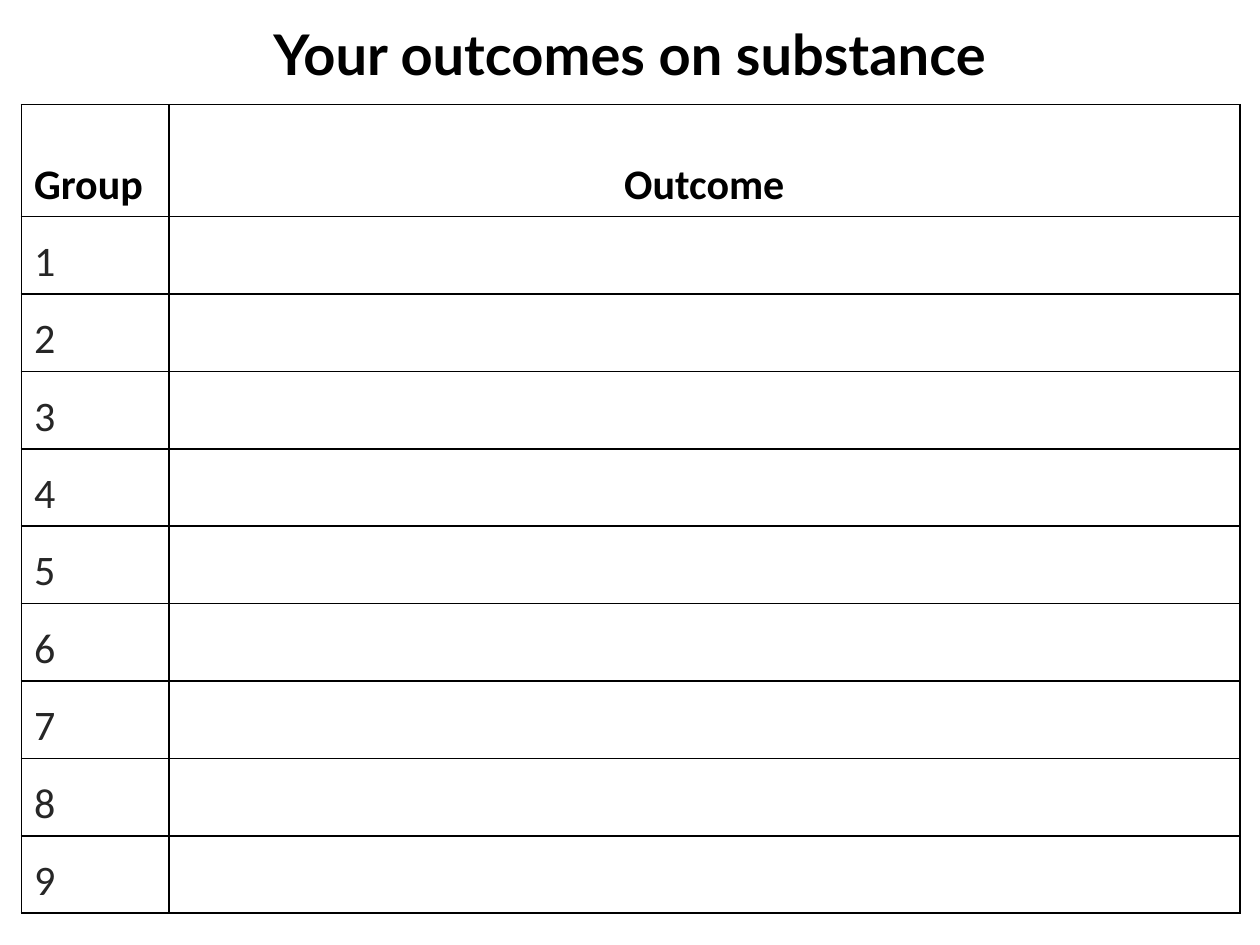
from lxml import etree
from pptx import Presentation
from pptx.dml.color import RGBColor
from pptx.enum.text import MSO_ANCHOR, PP_ALIGN
from pptx.oxml.ns import qn
from pptx.util import Inches, Pt

LEFT, CENTER = PP_ALIGN.LEFT, PP_ALIGN.CENTER
BOTTOM = MSO_ANCHOR.BOTTOM
BLACK = RGBColor(0x00, 0x00, 0x00)
DARK_GRAY = RGBColor(0x26, 0x26, 0x26)

GROUPS = 9
TABLE_HEIGHT = 6.42
HEADER_HEIGHT = 0.89
COLUMN_WIDTHS = (1.17, 8.5)


def write_text(tf, text, size=24, font="Calibri", color=BLACK, bold=False, align=LEFT):
    p = tf.paragraphs[0]
    p.alignment = align
    r = p.add_run()
    r.text = text
    r.font.size = Pt(size)
    r.font.name = font
    r.font.bold = bold
    r.font.color.rgb = color


def add_title(s, text):
    sp = s.shapes.add_textbox(Inches(0), Inches(0.11), Inches(10), Inches(0.64))
    sp.text_frame.word_wrap = True
    write_text(sp.text_frame, text, size=32, font="Lato", bold=True, align=CENTER)


def set_borders(cell, color=BLACK, width=1):
    props = cell._tc.get_or_add_tcPr()
    for i, side in enumerate(("a:lnL", "a:lnR", "a:lnT", "a:lnB")):
        line = etree.Element(qn(side), w=str(Pt(width)))
        fill = etree.SubElement(line, qn("a:solidFill"))
        etree.SubElement(fill, qn("a:srgbClr"), val=str(color))
        props.insert(i, line)


def add_outcome_table(s):
    frame = s.shapes.add_table(GROUPS + 1, len(COLUMN_WIDTHS), Inches(0.17), Inches(0.83),
                               Inches(sum(COLUMN_WIDTHS)), Inches(TABLE_HEIGHT))
    table = frame.table
    table.horz_banding = False
    table.first_row = False
    for column, width in zip(table.columns, COLUMN_WIDTHS):
        column.width = Inches(width)
    for row in table.rows:
        row.height = Inches((TABLE_HEIGHT - HEADER_HEIGHT) / GROUPS)
    table.rows[0].height = Inches(HEADER_HEIGHT)
    for cell in table.iter_cells():
        cell.fill.background()
        cell.vertical_anchor = BOTTOM
        set_borders(cell)

    write_text(table.cell(0, 0).text_frame, "Group", bold=True)
    write_text(table.cell(0, 1).text_frame, "Outcome", bold=True, align=CENTER)
    for group in range(1, GROUPS + 1):
        write_text(table.cell(group, 0).text_frame, str(group), color=DARK_GRAY)


def main():
    prs = Presentation()
    prs.slide_width, prs.slide_height = Inches(10), Inches(7.5)
    s = prs.slides.add_slide(prs.slide_layouts[6])
    add_outcome_table(s)
    add_title(s, "Your outcomes on substance")
    prs.save("out.pptx")


if __name__ == "__main__":
    main()
